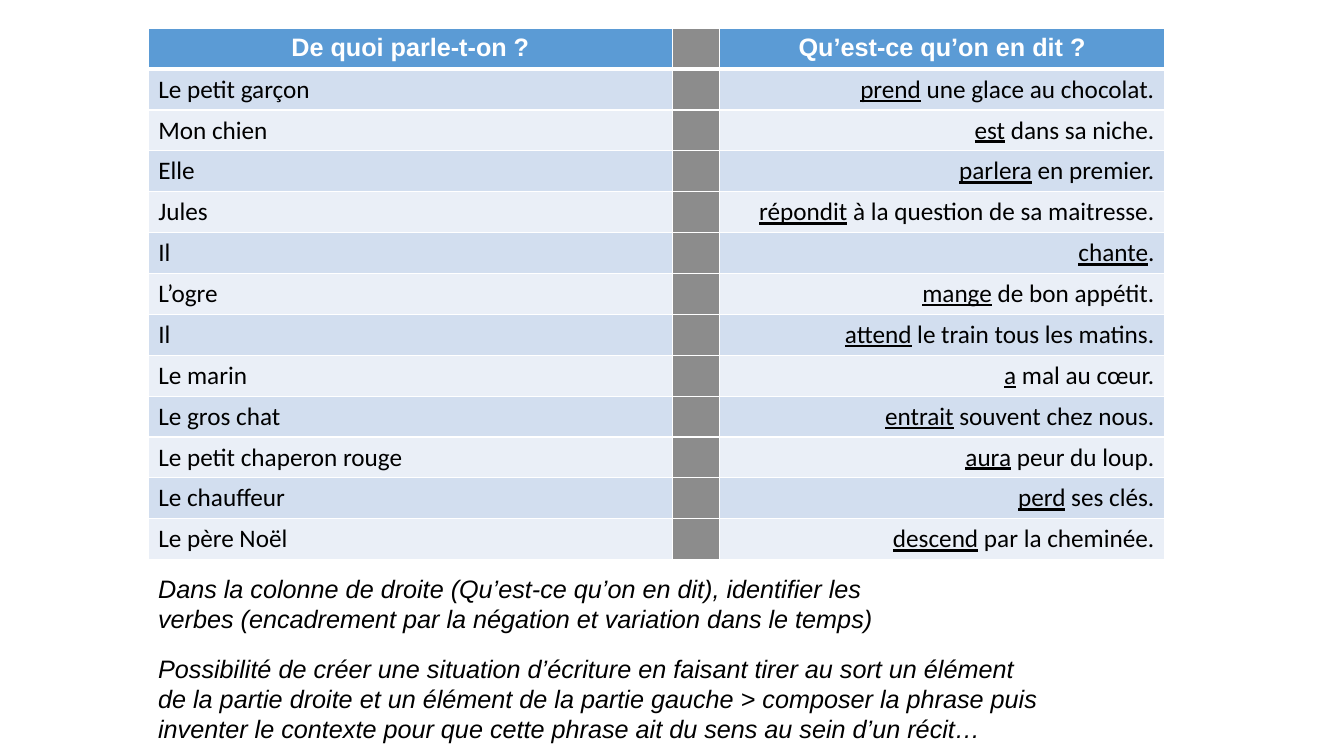
from lxml.etree import SubElement
from pptx import Presentation
from pptx.dml.color import RGBColor
from pptx.enum.text import MSO_AUTO_SIZE as AutoSize, PP_ALIGN as Align
from pptx.oxml import parse_xml
from pptx.oxml.ns import nsdecls, qn
from pptx.util import Inches, Pt

WHITE = RGBColor(0xFF, 0xFF, 0xFF)
BLACK = RGBColor(0x00, 0x00, 0x00)
GREY = RGBColor(0x8C, 0x8C, 0x8C)
HEADER_BLUE = RGBColor(0x5B, 0x9B, 0xD5)
BANDS = (RGBColor(0xD2, 0xDE, 0xEF), RGBColor(0xEA, 0xEF, 0xF7))

HEADERS = ("De quoi parle-t-on ?", "Qu’est-ce qu’on en dit ?")
SENTENCES = [
    ("Le petit garçon", "prend", " une glace au chocolat."),
    ("Mon chien", "est", " dans sa niche."),
    ("Elle", "parlera", " en premier."),
    ("Jules", "répondit", " à la question de sa maitresse."),
    ("Il", "chante", "."),
    ("L’ogre", "mange", " de bon appétit."),
    ("Il", "attend", " le train tous les matins."),
    ("Le marin", "a", " mal au cœur."),
    ("Le gros chat", "entrait", " souvent chez nous."),
    ("Le petit chaperon rouge", "aura", " peur du loup."),
    ("Le chauffeur", "perd", " ses clés."),
    ("Le père Noël", "descend", " par la cheminée."),
]
NOTES = [
    (5.64, 7.64, 0.71,
     "Dans la colonne de droite (Qu’est-ce qu’on en dit), identifier les verbes "
     "(encadrement par la négation et variation dans le temps)"),
    (6.43, 9, 1.01,
     "Possibilité de créer une situation d’écriture en faisant tirer au sort un élément "
     "de la partie droite et un élément de la partie gauche > composer la phrase puis "
     "inventer le contexte pour que cette phrase ait du sens au sein d’un récit…"),
]
LEFT = 1.47
COLUMN_WIDTHS = (5.2, 0.47, 4.41)


class GrammarSlide:
    """Holds the text style and the slide, and adds its elements."""

    def __init__(self, slide, size=18):
        self.slide = slide
        self.size = Pt(size)

    def run(self, paragraph, text, font="Calibri", color=BLACK, **styles):
        run = paragraph.add_run()
        run.text = text
        run.font.name = font
        run.font.size = self.size
        run.font.color.rgb = color
        for style, value in styles.items():
            setattr(run.font, style, value)

    def cell(self, cell, fill, bottom=1):
        cell.fill.solid()
        cell.fill.fore_color.rgb = fill
        properties = cell._tc.get_or_add_tcPr()
        for index, (side, width) in enumerate(zip("LRTB", (1, 1, 1, bottom))):
            line = parse_xml(f'<a:ln{side} {nsdecls("a")} w="{Pt(width)}"/>')
            solid = SubElement(line, qn("a:solidFill"))
            SubElement(solid, qn("a:srgbClr"), val=str(WHITE))
            properties.insert(index, line)
        paragraph = cell.text_frame.paragraphs[0]
        paragraph.font.size = self.size
        return paragraph

    def table(self, headers, sentences):
        table = self.slide.shapes.add_table(
            len(sentences) + 1, len(COLUMN_WIDTHS), Inches(LEFT), Inches(0.28),
            Inches(sum(COLUMN_WIDTHS)), Inches(5.27)).table
        for column, width in zip(table.columns, COLUMN_WIDTHS):
            column.width = Inches(width)
        for column, text in zip((0, 2), headers):
            paragraph = self.cell(table.cell(0, column), HEADER_BLUE, bottom=3)
            paragraph.alignment = Align.CENTER
            self.run(paragraph, text, "Arial", WHITE, bold=True)
        self.cell(table.cell(0, 1), GREY, bottom=3)
        for row, (subject, verb, rest) in enumerate(sentences, start=1):
            band = BANDS[(row - 1) % 2]
            self.run(self.cell(table.cell(row, 0), band), subject)
            self.cell(table.cell(row, 1), GREY)
            paragraph = self.cell(table.cell(row, 2), band)
            paragraph.alignment = Align.RIGHT
            self.run(paragraph, verb, underline=True)
            self.run(paragraph, rest)

    def note(self, top, width, height, text):
        frame = self.slide.shapes.add_textbox(
            Inches(LEFT), Inches(top), Inches(width), Inches(height)).text_frame
        frame.word_wrap = True
        frame.auto_size = AutoSize.SHAPE_TO_FIT_TEXT
        self.run(frame.paragraphs[0], text, "Arial", italic=True)


def main():
    presentation = Presentation()
    presentation.slide_width = Inches(13.33)
    presentation.slide_height = Inches(7.5)
    blank_layout = presentation.slide_layouts[6]
    grammar = GrammarSlide(presentation.slides.add_slide(blank_layout))
    grammar.table(HEADERS, SENTENCES)
    for note in NOTES:
        grammar.note(*note)
    presentation.save("out.pptx")


if __name__ == "__main__":
    main()
